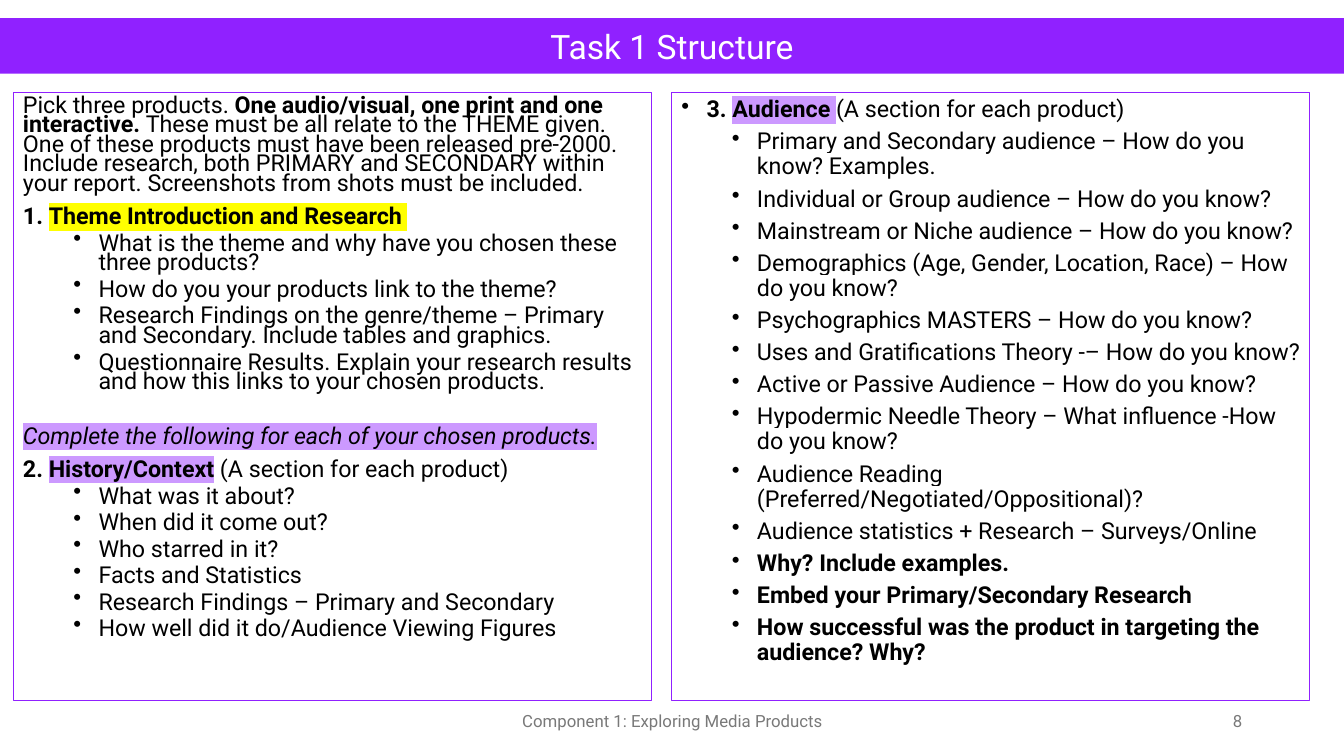
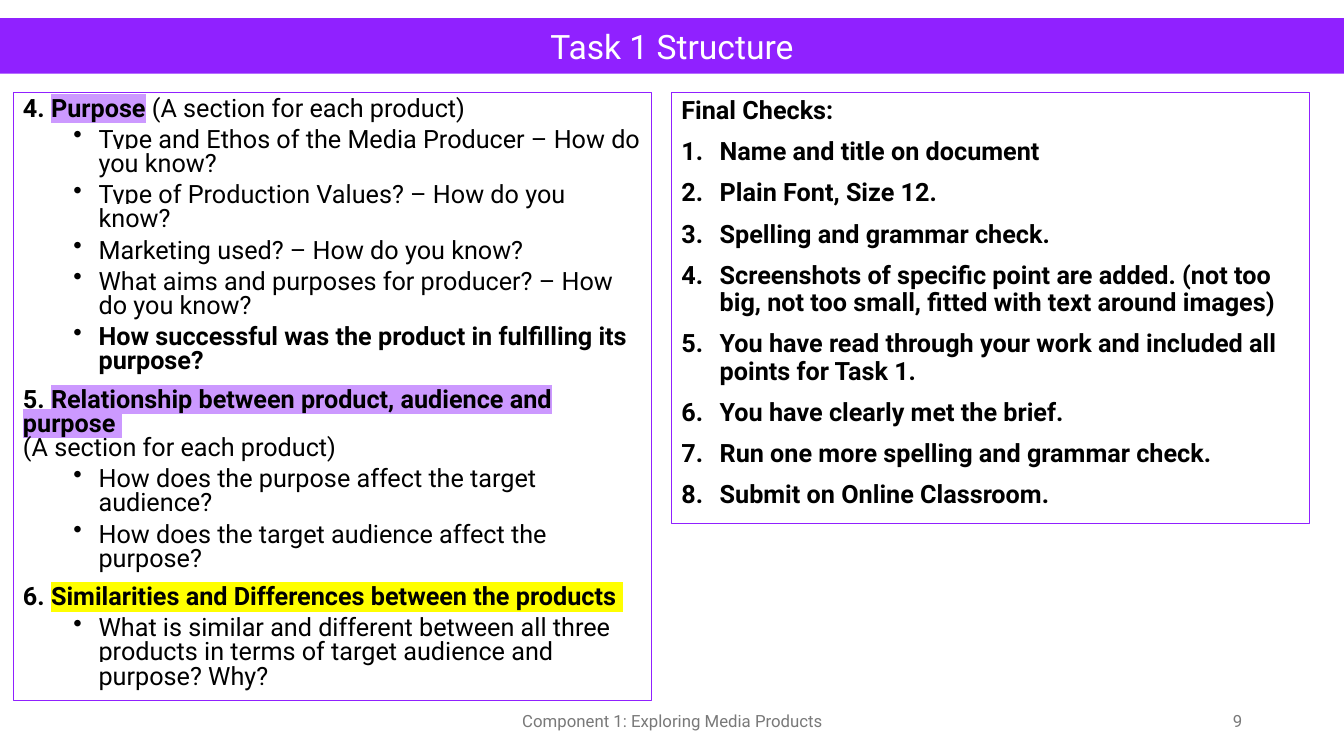
from dataclasses import dataclass
from typing import NamedTuple, Optional

import lxml.etree
import pptx
import pptx.dml.color
import pptx.enum.text
import pptx.oxml.ns
import pptx.slide
import pptx.text.text
import pptx.util

SLIDE_WIDTH, SLIDE_HEIGHT = 13.33, 7.5
MARGIN, GUTTER = 0.13, 0.2
PANEL_WIDTH, PANEL_TOP, PANEL_HEIGHT = 6.33, 0.92, 6.03
FOOTER_TOP, FOOTER_HEIGHT = PANEL_TOP + PANEL_HEIGHT, 0.4
COLORS = {
    "purple": "9021FF",
    "white": "FFFFFF",
    "black": "000000",
    "grey": "797979",
    "lilac": "CC99FF",
    "yellow": "FFFF00",
}
FONT = "Roboto"
TITLE = "Task 1 Structure"
FOOTER = "Component 1: Exploring Media Products"
ALIGN = pptx.enum.text.PP_ALIGN
ANCHOR = pptx.enum.text.MSO_ANCHOR


class Area(NamedTuple):
    left: float
    top: float
    width: float
    height: float


class ParaStyle(NamedTuple):
    before: float
    indent: float = 0
    hanging: float = 0
    bullet: Optional[tuple[str, str, str]] = None  # tag, attribute, value


DOT = ("a:buChar", "char", "•")
HEADING = ParaStyle(10)
AFTER_GAP = ParaStyle(25)
DOT_HEADING = ParaStyle(10, 0.25, 0.25, DOT)
POINT = ParaStyle(5, 0.75, 0.25, DOT)
CHECK = ParaStyle(10, 0.38, 0.38, ("a:buAutoNum", "type", "arabicPeriod"))


class Span(NamedTuple):
    text: str
    bold: bool = False
    italic: bool = False
    mark: Optional[str] = None
    break_before: bool = False


class Line(NamedTuple):
    spans: tuple[Span, ...]
    style: ParaStyle = HEADING


@dataclass(frozen=True)
class Panel:
    lines: list[Line]
    size: float
    spacing: float
    height: float = PANEL_HEIGHT


@dataclass(frozen=True)
class Page:
    number: int
    panels: tuple[Panel, ...]


def points(*texts: str, bold: bool = False, mark: Optional[str] = None,
           style: ParaStyle = POINT) -> list[Line]:
    return [Line((Span(text, bold, mark=mark),), style) for text in texts]


def section(number: int, name: str, mark: str, *rest: Span,
            style: ParaStyle = HEADING) -> Line:
    """Numbered bold heading whose name is highlighted."""
    return Line((Span(f"{number}. ", True), Span(name, True, mark=mark), *rest), style)


EACH_PRODUCT = Span("(A section for each product)")

PAGES = [
    Page(8, (
        Panel([
            Line((
                Span("Pick three products. "),
                Span("One audio/visual, one print and one interactive. ", True),
                Span("These must be all relate to the THEME given. One of these products "
                     "must have been released pre-2000. Include research, both PRIMARY and "
                     "SECONDARY within your report. Screenshots from shots must be included."),
            )),
            section(1, "Theme Introduction and Research ", "yellow"),
            *points(
                "What is the theme and why have you chosen these three products?",
                "How do you your products link to the theme?",
                "Research Findings on the genre/theme – Primary and Secondary. "
                "Include tables and graphics.",
                "Questionnaire Results. Explain your research results and how this links "
                "to your chosen products.",
            ),
            Line((Span("Complete the following for each of your chosen products.",
                       italic=True, mark="lilac"),), AFTER_GAP),
            section(2, "History/Context", "lilac", Span(" "), EACH_PRODUCT),
            *points(
                "What was it about?",
                "When did it come out?",
                "Who starred in it?",
                "Facts and Statistics",
                "Research Findings – Primary and Secondary",
                "How well did it do/Audience Viewing Figures",
            ),
        ], 16.6, 0.7),
        Panel([
            section(3, "Audience ", "lilac", EACH_PRODUCT, style=DOT_HEADING),
            *points(
                "Primary and Secondary audience – How do you know? Examples.",
                "Individual or Group audience – How do you know?",
                "Mainstream or Niche audience – How do you know?",
                "Demographics (Age, Gender, Location, Race) – How do you know?",
                "Psychographics MASTERS – How do you know?",
                "Uses and Gratifications Theory -– How do you know?",
                "Active or Passive Audience – How do you know?",
                "Hypodermic Needle Theory – What influence -How do you know?",
                "Audience Reading (Preferred/Negotiated/Oppositional)?",
                "Audience statistics + Research – Surveys/Online",
                mark="white",
            ),
            *points(
                "Why? Include examples.",
                "Embed your Primary/Secondary Research",
                "How successful was the product in targeting the audience? Why?",
                bold=True, mark="white",
            ),
        ], 16.6, 0.9),
    )),
    Page(9, (
        Panel([
            section(4, "Purpose", "lilac", Span(" "), EACH_PRODUCT),
            *points(
                "Type and Ethos of the Media Producer – How do you know?",
                "Type of Production Values? – How do you know?",
                "Marketing used? – How do you know?",
                "What aims and purposes for producer? – How do you know?",
                mark="white",
            ),
            *points("How successful was the product in fulfilling its purpose?",
                    bold=True, mark="white"),
            section(5, "Relationship between product, audience and purpose ", "lilac",
                    EACH_PRODUCT._replace(break_before=True)),
            *points(
                "How does the purpose affect the target audience?",
                "How does the target audience affect the purpose?",
                mark="white",
            ),
            section(6, "Similarities and Differences between the products ", "yellow"),
            *points("What is similar and different between all three products in terms "
                    "of target audience and purpose? Why?", mark="white"),
        ], 18, 0.8),
        Panel([
            *points("Final Checks:", bold=True, style=HEADING),
            *points(
                "Name and title on document",
                "Plain Font, Size 12.",
                "Spelling and grammar check.",
                "Screenshots of specific point are added. (not too big, not too small, "
                "fitted with text around images)",
                "You have read through your work and included all points for Task 1.",
                "You have clearly met the brief.",
                "Run one more spelling and grammar check.",
                "Submit on Online Classroom.",
                bold=True, style=CHECK,
            ),
        ], 18, 0.9, 4.27),
    )),
]


def rgb(name: str) -> pptx.dml.color.RGBColor:
    return pptx.dml.color.RGBColor.from_string(COLORS[name])


def add_box(slide: pptx.slide.Slide, area: Area, anchor: ANCHOR = ANCHOR.MIDDLE,
            fill: Optional[str] = None, line: Optional[str] = None
            ) -> pptx.text.text.TextFrame:
    box = slide.shapes.add_textbox(*(pptx.util.Inches(length) for length in area))
    if fill:
        box.fill.solid()
        box.fill.fore_color.rgb = rgb(fill)
    if line:
        box.line.color.rgb = rgb(line)
        box.line.width = pptx.util.Pt(0.75)
    box.text_frame.word_wrap = True
    box.text_frame.vertical_anchor = anchor
    return box.text_frame


def set_font(para: pptx.text.text._Paragraph, size: float, color: str) -> None:
    para.font.name = FONT
    para.font.size = pptx.util.Pt(size)
    para.font.color.rgb = rgb(color)


def add_label(slide: pptx.slide.Slide, area: Area, text: str, size: float, color: str,
              align: ALIGN = ALIGN.CENTER, fill: Optional[str] = None) -> None:
    para = add_box(slide, area, fill=fill).paragraphs[0]
    para.text = text
    para.alignment = align
    set_font(para, size, color)


def set_indent(para: pptx.text.text._Paragraph, style: ParaStyle) -> None:
    properties = para._p.get_or_add_pPr()
    properties.set("marL", str(pptx.util.Inches(style.indent)))
    properties.set("indent", str(-pptx.util.Inches(style.hanging)))
    if style.bullet:
        tag, attribute, value = style.bullet
        bullet = lxml.etree.SubElement(properties, pptx.oxml.ns.qn(tag))
        bullet.set(attribute, value)


def highlight(run: pptx.text.text._Run, color: str) -> None:
    mark = lxml.etree.SubElement(run._r.get_or_add_rPr(), pptx.oxml.ns.qn("a:highlight"))
    lxml.etree.SubElement(mark, pptx.oxml.ns.qn("a:srgbClr")).set("val", COLORS[color])


def add_panel(slide: pptx.slide.Slide, column: int, panel: Panel) -> None:
    left = MARGIN + column * (PANEL_WIDTH + GUTTER)
    frame = add_box(slide, Area(left, PANEL_TOP, PANEL_WIDTH, panel.height),
                    ANCHOR.TOP, line="purple")
    for index, line in enumerate(panel.lines):
        para = frame.add_paragraph() if index else frame.paragraphs[0]
        set_indent(para, line.style)
        para.alignment = ALIGN.LEFT
        para.line_spacing = panel.spacing
        para.space_before = pptx.util.Pt(line.style.before if index else 0)
        set_font(para, panel.size, "black")
        uniform = len({(span.bold, span.italic) for span in line.spans}) == 1
        for span in line.spans:
            if span.break_before:
                para.add_line_break()
            run = para.add_run()
            run.text = span.text
            font = para.font if uniform else run.font
            font.bold, font.italic = span.bold, span.italic
            if span.mark:
                highlight(run, span.mark)


def add_page(deck: pptx.presentation.Presentation, page: Page) -> None:
    slide = deck.slides.add_slide(deck.slide_layouts[6])
    add_label(slide, Area(0, 0.18, SLIDE_WIDTH, 0.55), TITLE, 24, "white", fill="purple")
    for column, panel in enumerate(page.panels):
        add_panel(slide, column, panel)
    add_label(slide, Area(4.42, FOOTER_TOP, 4.5, FOOTER_HEIGHT), FOOTER, 12, "grey")
    add_label(slide, Area(9.42, FOOTER_TOP, 3, FOOTER_HEIGHT), str(page.number), 12,
              "grey", ALIGN.RIGHT)


def main() -> None:
    deck = pptx.Presentation()
    deck.slide_width = pptx.util.Inches(SLIDE_WIDTH)
    deck.slide_height = pptx.util.Inches(SLIDE_HEIGHT)
    for page in PAGES:
        add_page(deck, page)
    deck.save("out.pptx")


if __name__ == "__main__":
    main()
